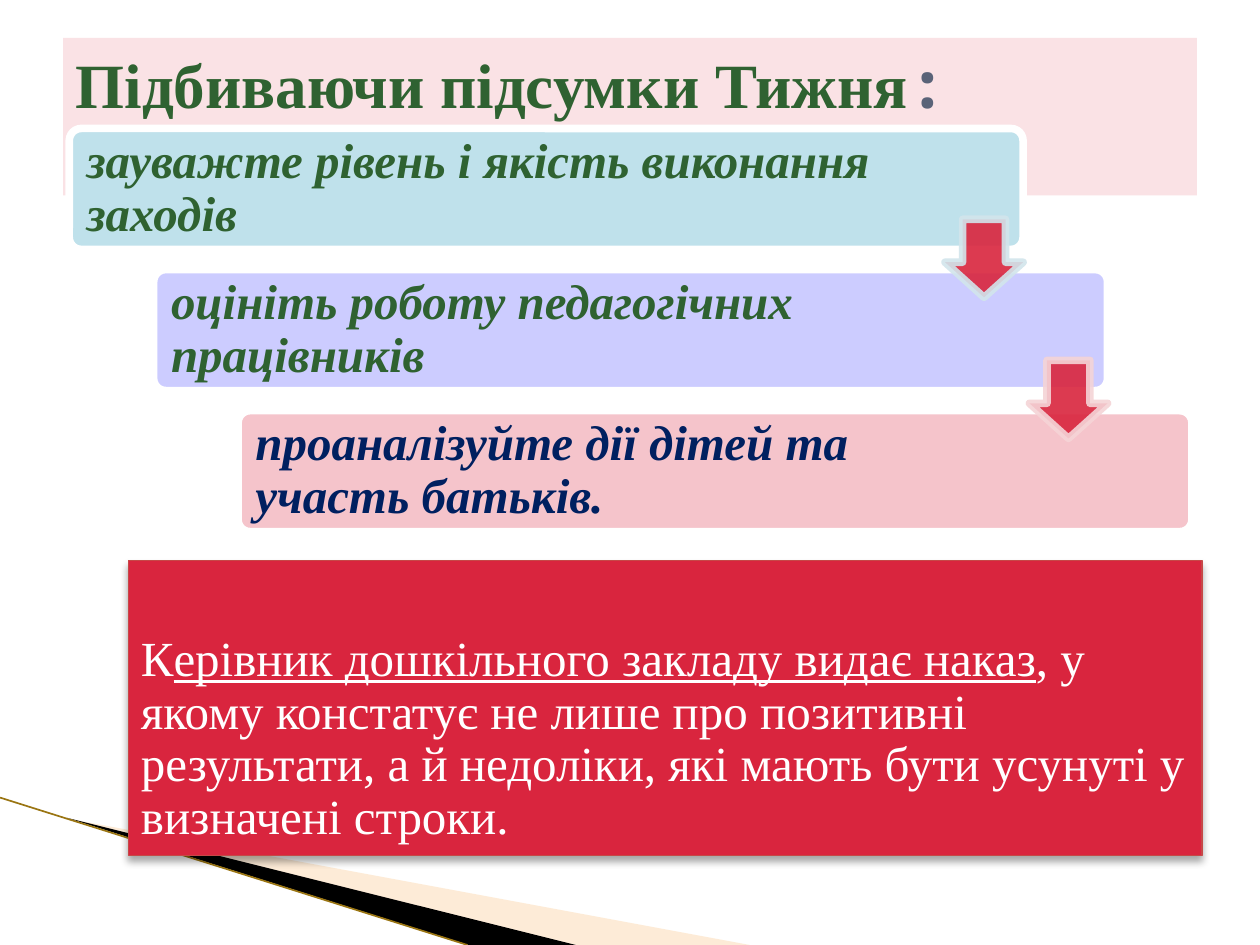
from lxml import etree
from pptx import Presentation
from pptx.dml.color import RGBColor
from pptx.enum.shapes import MSO_CONNECTOR, MSO_SHAPE
from pptx.enum.text import MSO_ANCHOR, PP_ALIGN
from pptx.oxml.ns import qn
from pptx.util import Inches, Pt

SERIF = "Times New Roman"
GREEN, NAVY, RED, WHITE = "2F6231", "002060", "D9253E", "FFFFFF"

TITLE = [("Підбиваючи підсумки Тижня", SERIF, 36, GREEN),
         (":", "Noto Sans Mono", 36.9, "5A6378")]
STEPS = [
    ("зауважте рівень і якість виконання заходів", "BFE1EB", GREEN, 1.11),
    ("оцініть роботу педагогічних працівників", "CCCCFF", GREEN, 1.41),
    ("проаналізуйте дії дітей та участь батьків.", "F5C4CB", NAVY, 1.41),
]
ARROW_OUTLINES = ["D2E5EC", "F5D4D7"]
ORDER = [("К", False),
         ("ерівник дошкільного закладу видає наказ", True),
         (", у якому констатує не лише про позитивні результати, а й недоліки, "
          "які мають бути усунуті у визначені строки.", False)]
WEDGES = [
    ([(0.55, 6.5), (5.95, 7.5), (4.56, 7.5)], "FCCF9B", 40),
    ([(0.53, 6.49), (4.57, 7.5), (3.72, 7.5)], "000000", 100),
]

STEP_LEFT, STEP_TOP, STEP_WIDTH, STEP_HEIGHT = 0.55, 1.02, 7.57, 0.96
SHIFT, DROP = 0.67, 1.12
ARROW_SIZE = 0.62


def rgb(color):
    return RGBColor.from_string(color)


def set_alpha(paint, percent):
    color = paint._xPr.find(qn("a:solidFill"))[0]
    etree.SubElement(color, qn("a:alpha"), val=str(percent * 1000))


def paint(shape, fill, line=None, width=0, alpha=100):
    shape.shadow.inherit = False
    shape.fill.solid()
    shape.fill.fore_color.rgb = rgb(fill)
    if line:
        shape.line.color.rgb = rgb(line)
        shape.line.width = Pt(width)
    else:
        shape.line.fill.background()
    if alpha < 100:
        set_alpha(shape.fill, alpha)
        if line:
            set_alpha(shape.line.fill, alpha)


def add_box(slide, kind, left, top, width, height):
    return slide.shapes.add_shape(kind, *map(Inches, (left, top, width, height)))


def prepare(shape, anchor, left, top, right, bottom, spacing):
    frame = shape.text_frame
    frame.word_wrap = True
    frame.vertical_anchor = anchor
    frame.margin_left, frame.margin_top = Inches(left), Inches(top)
    frame.margin_right, frame.margin_bottom = Inches(right), Inches(bottom)
    paragraph = frame.paragraphs[0]
    paragraph.alignment = PP_ALIGN.LEFT
    paragraph.line_spacing = spacing
    return paragraph


def add_run(paragraph, text, font, size, color, bold=False, italic=False, underline=False):
    run = paragraph.add_run()
    run.text = text
    run.font.name, run.font.size = font, Pt(size)
    run.font.bold, run.font.italic, run.font.underline = bold, italic, underline
    run.font.color.rgb = rgb(color)


def add_decor(slide):
    for points, color, alpha in WEDGES:
        corners = [(Inches(x), Inches(y)) for x, y in points]
        builder = slide.shapes.build_freeform(*corners[0])
        builder.add_line_segments(corners[1:])
        paint(builder.convert_to_shape(), color, alpha=alpha)
    edge = slide.shapes.add_connector(
        MSO_CONNECTOR.STRAIGHT, *map(Inches, (0, 6.33, 3.71, 7.5)))
    edge.line.color.rgb = rgb("9A7512")
    edge.line.width = Pt(0.95)
    etree.SubElement(edge._element.spPr, qn("a:effectLst"))


def add_title(slide):
    title = slide.shapes.title
    title.left, title.top, title.width, title.height = map(Inches, (0.5, 0.3, 9, 1.25))
    title.fill.solid()
    title.fill.fore_color.rgb = rgb("FAE2E5")
    paragraph = prepare(title, MSO_ANCHOR.TOP, 0.1, 0.05, 0.1, 0.05, 1.0)
    for text, font, size, color in TITLE:
        add_run(paragraph, text, font, size, color, bold=True)


def add_order(slide):
    order = add_box(slide, MSO_SHAPE.RECTANGLE, 1.02, 4.45, 8.52, 2.34)
    paint(order, RED, "C64847", 0.75)
    effects = order._element.spPr.find(qn("a:effectLst"))
    shadow = etree.SubElement(effects, qn("a:outerShdw"), blurRad=str(Pt(4)),
                              dist=str(Pt(3)), dir="5400000", rotWithShape="0")
    color = etree.SubElement(shadow, qn("a:srgbClr"), val="000000")
    etree.SubElement(color, qn("a:alpha"), val="35000")
    paragraph = prepare(order, MSO_ANCHOR.TOP, 0.1, 0.58, 0.1, 0.05, 0.9)
    for text, underline in ORDER:
        add_run(paragraph, text, SERIF, 28, WHITE, underline=underline)


def add_steps(slide):
    for row, (text, fill, color, right) in enumerate(STEPS):
        step = add_box(slide, MSO_SHAPE.ROUNDED_RECTANGLE, STEP_LEFT + row * SHIFT,
                       STEP_TOP + row * DROP, STEP_WIDTH, STEP_HEIGHT)
        step.adjustments[0] = 0.1
        paint(step, fill, WHITE, 4.33)
        paragraph = prepare(step, MSO_ANCHOR.MIDDLE, 0.11, 0.05, right, 0.05, 0.9)
        add_run(paragraph, text, SERIF, 28, color, bold=True, italic=True)
    for row, outline in enumerate(ARROW_OUTLINES):
        arrow = add_box(slide, MSO_SHAPE.DOWN_ARROW,
                        STEP_LEFT + STEP_WIDTH - ARROW_SIZE + row * SHIFT,
                        1.74 + row * DROP, ARROW_SIZE, ARROW_SIZE)
        arrow.adjustments[0], arrow.adjustments[1] = 0.55, 0.45
        paint(arrow, RED, outline, 4.33, 90)


def main():
    """Build the slide on summing up the week."""
    deck = Presentation()
    deck.slide_width, deck.slide_height = Inches(10), Inches(7.5)
    slide = deck.slides.add_slide(deck.slide_layouts[5])
    add_decor(slide)
    add_title(slide)
    add_order(slide)
    add_steps(slide)
    deck.save("out.pptx")


if __name__ == "__main__":
    main()
